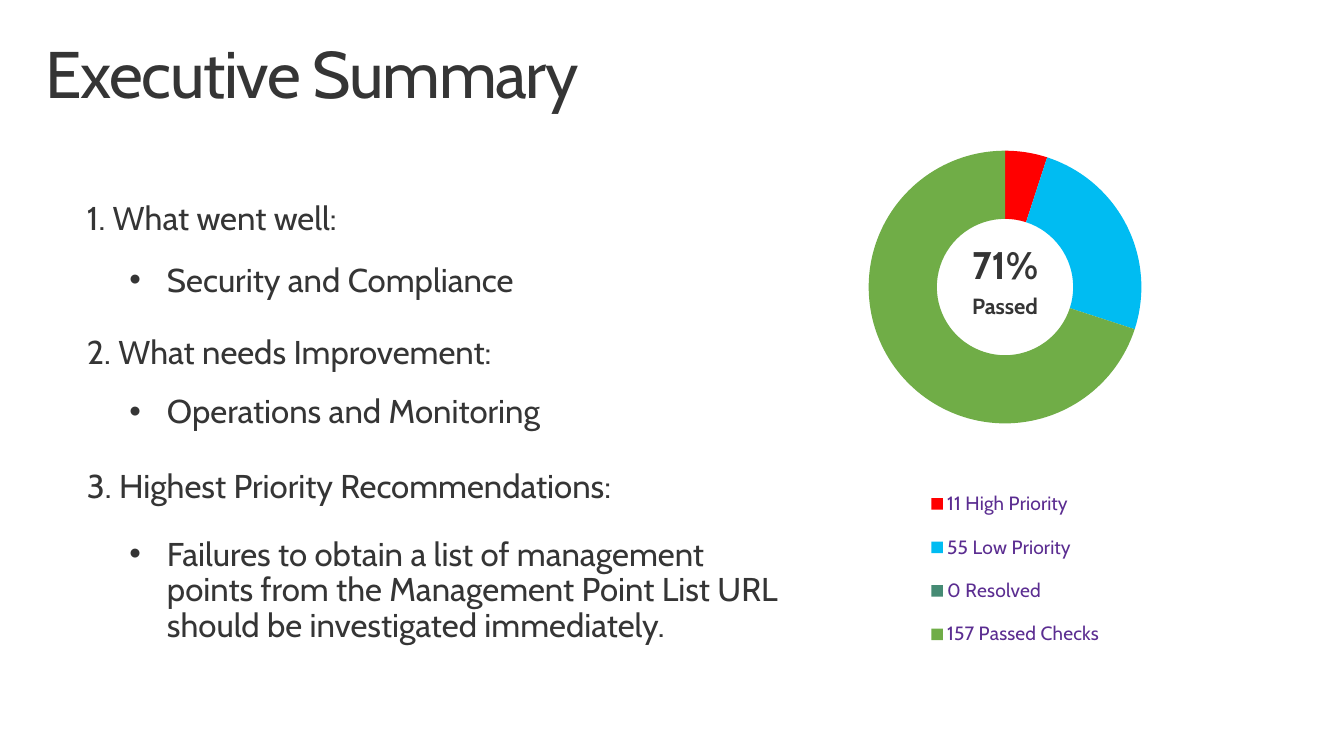
"""Build an executive summary slide with findings and a doughnut chart of check results."""
import lxml.etree
import pptx
import pptx.chart.data
import pptx.dml.color
import pptx.enum.chart
import pptx.enum.text
import pptx.oxml.ns
import pptx.util
from pptx.util import Inches

FONT = "Cabin"
DARK = pptx.dml.color.RGBColor(0x35, 0x35, 0x35)
PURPLE = pptx.dml.color.RGBColor(0x5B, 0x2D, 0x91)
RED = pptx.dml.color.RGBColor(0xFF, 0x00, 0x00)
NAVY = pptx.dml.color.RGBColor(0x00, 0x1D, 0x49)
BLUE = pptx.dml.color.RGBColor(0x00, 0xBC, 0xF2)
MAGENTA = pptx.dml.color.RGBColor(0xA3, 0x00, 0x8F)
TEAL = pptx.dml.color.RGBColor(0x45, 0x8B, 0x74)
GRAY = pptx.dml.color.RGBColor(0xD1, 0xD1, 0xD1)
GREEN = pptx.dml.color.RGBColor(0x70, 0xAD, 0x47)

CHART_WIDTH, CHART_HEIGHT = 4.83, 6.33
CHECKS = [
    ("11 High Priority", 5, RED),
    ("", None, NAVY),
    ("55 Low Priority", 25, BLUE),
    ("", None, MAGENTA),
    ("0 Resolved", 0, TEAL),
    ("", None, GRAY),
    ("157 Passed Checks", 70, GREEN),
]
FINDINGS = [
    ("1. What went well:", 1.88, "Security and Compliance", 2.51),
    ("2. What needs Improvement:", 3.24, "Operations and Monitoring", 3.84),
    ("3. Highest Priority Recommendations:", 4.6,
     "Failures to obtain a list of management points from the Management Point "
     "List URL should be investigated immediately.", 5.28),
]


def style_font(font, size, color=DARK, bold=False):
    """Set the typeface, size, colour and weight of a font."""
    font.name = FONT
    font.size = pptx.util.Pt(size)
    font.color.rgb = color
    font.bold = bold


def set_margins(frame, side, top):
    """Set equal left and right, and equal top and bottom, insets."""
    frame.margin_left = frame.margin_right = Inches(side)
    frame.margin_top = frame.margin_bottom = Inches(top)


def add_title(slide, text):
    """Fill, place and format the title placeholder."""
    title = slide.shapes.title
    title.left, title.top = Inches(0.3), Inches(0.32)
    title.width, title.height = Inches(13), Inches(1)
    frame = title.text_frame
    frame.text = text
    frame.auto_size = pptx.enum.text.MSO_AUTO_SIZE.NONE
    frame.vertical_anchor = pptx.enum.text.MSO_ANCHOR.TOP
    set_margins(frame, 0.16, 0.1)
    heading = frame.paragraphs[0]
    heading.alignment = pptx.enum.text.PP_ALIGN.LEFT
    heading.line_spacing = 0.9
    style_font(heading.font, 48)
    style_font(heading.runs[0].font, 48)
    heading.runs[0].font._element.set("spc", "-100")


def add_text(slide, left, top, width, height, lines,
             align=pptx.enum.text.PP_ALIGN.LEFT, bold=False):
    """Add a text box of (text, size) lines and return its paragraphs."""
    box = slide.shapes.add_textbox(Inches(left), Inches(top), Inches(width), Inches(height))
    frame = box.text_frame
    frame.word_wrap = True
    frame.auto_size = pptx.enum.text.MSO_AUTO_SIZE.SHAPE_TO_FIT_TEXT
    set_margins(frame, 0.2, 0.16)
    frame.text = "\n".join(text for text, _ in lines)
    for paragraph, (_, size) in zip(frame.paragraphs, lines):
        paragraph.alignment = align
        paragraph.line_spacing = 0.9
        paragraph.space_after = pptx.util.Pt(6)
        style_font(paragraph.font, size, bold=bold)
    return frame.paragraphs


def add_bullet(paragraph):
    """Give a paragraph a hanging round bullet."""
    qn = pptx.oxml.ns.qn
    properties = paragraph._p.get_or_add_pPr()
    properties.set("marL", str(Inches(0.38)))
    properties.set("indent", str(Inches(-0.38)))
    defaults = properties.find(qn("a:defRPr"))
    defaults.addprevious(lxml.etree.Element(qn("a:buFont"), typeface="Arial"))
    defaults.addprevious(lxml.etree.Element(qn("a:buChar"), char="•"))


def set_layout(part, position, left, top, width, height, target=None):
    """Place a chart part by its inches inside the chart area."""
    qn = pptx.oxml.ns.qn
    for automatic in part.findall(qn("c:layout")):
        part.remove(automatic)
    layout = lxml.etree.Element(qn("c:layout"))
    manual = lxml.etree.SubElement(layout, qn("c:manualLayout"))
    settings = {"layoutTarget": target} if target else {}
    settings.update(xMode="edge", yMode="edge",
                    x=left / CHART_WIDTH, y=top / CHART_HEIGHT,
                    w=width / CHART_WIDTH, h=height / CHART_HEIGHT)
    for name, value in settings.items():
        lxml.etree.SubElement(manual, qn(f"c:{name}"), val=str(value))
    part.insert(position, layout)


def hide_blank_entries(legend):
    """Leave the unnamed categories out of the legend."""
    qn = pptx.oxml.ns.qn
    blanks = [index for index, (label, _, _) in enumerate(CHECKS) if not label]
    for position, index in enumerate(blanks, start=1):
        entry = lxml.etree.Element(qn("c:legendEntry"))
        lxml.etree.SubElement(entry, qn("c:idx"), val=str(index))
        lxml.etree.SubElement(entry, qn("c:delete"), val="1")
        legend.insert(position, entry)


def add_checks_chart(slide):
    """Add the doughnut of check results with its legend below."""
    data = pptx.chart.data.CategoryChartData()
    data.categories = [label for label, _, _ in CHECKS]
    data.add_series("Series 1", [share for _, share, _ in CHECKS])
    chart = slide.shapes.add_chart(
        pptx.enum.chart.XL_CHART_TYPE.DOUGHNUT, Inches(7.67), Inches(0.67),
        Inches(CHART_WIDTH), Inches(CHART_HEIGHT), data).chart
    style_font(chart.font, 10)
    chart.has_title = False
    plot = chart.plots[0]
    plot.vary_by_categories = True
    plot.has_data_labels = False
    for index, (_, _, color) in enumerate(CHECKS):
        slice_format = plot.series[0].points[index].format
        slice_format.fill.solid()
        slice_format.fill.fore_color.rgb = color
        slice_format.line.fill.background()
    chart.has_legend = True
    chart.legend.position = pptx.enum.chart.XL_LEGEND_POSITION.BOTTOM
    chart.legend.include_in_layout = False
    style_font(chart.legend.font, 14, PURPLE)
    chart.element.xpath(".//c:holeSize")[0].set("val", "68")
    set_layout(chart.element.xpath(".//c:plotArea")[0], 0, 1.12, 0.47, 2.76, 3.53, "inner")
    legend = chart.element.xpath(".//c:legend")[0]
    set_layout(legend, 1, 1.64, 4.11, 1.93, 1.96)
    hide_blank_entries(legend)


def main():
    """Create the presentation and save it."""
    presentation = pptx.Presentation()
    presentation.slide_width = Inches(13.6)
    presentation.slide_height = Inches(7.65)
    slide = presentation.slides.add_slide(presentation.slide_layouts[5])
    add_title(slide, "Executive Summary")
    add_checks_chart(slide)
    add_text(slide, 9.46, 2.33, 1.42, 3.19, [("71%", 28), ("Passed", 16)],
             pptx.enum.text.PP_ALIGN.CENTER, bold=True)
    for question, question_top, answer, answer_top in FINDINGS:
        add_text(slide, 0.68, question_top, 6.04, 0.69, [(question, 24)])
        add_bullet(add_text(slide, 1.11, answer_top, 7.01, 0.69, [(answer, 24)])[0])
    presentation.save("out.pptx")


if __name__ == "__main__":
    main()
